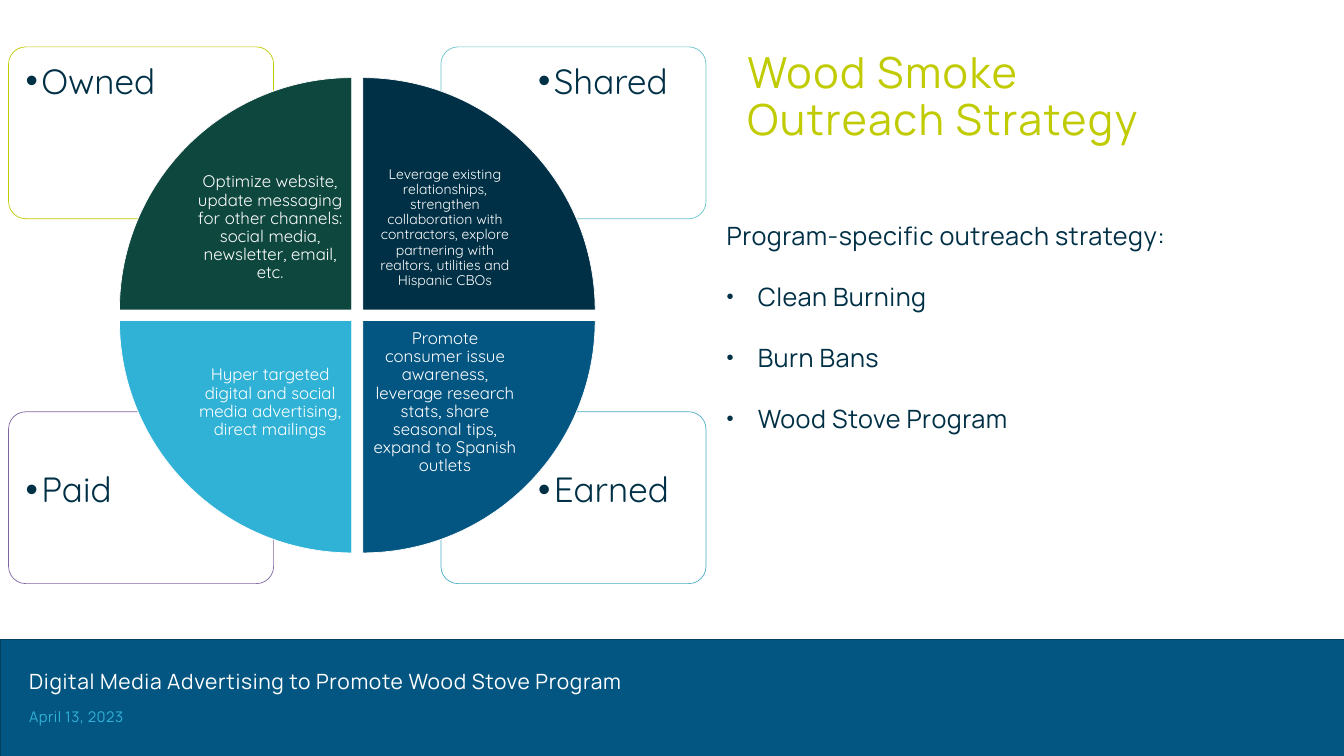
"""Build the wood smoke outreach strategy slide."""
from lxml import etree
from pptx import Presentation
from pptx.dml.color import RGBColor
from pptx.enum.shapes import MSO_SHAPE
from pptx.enum.text import MSO_ANCHOR, PP_ALIGN
from pptx.oxml.ns import qn
from pptx.util import Inches, Pt

RECT = MSO_SHAPE.RECTANGLE
ROUND = MSO_SHAPE.ROUNDED_RECTANGLE
WEDGE = MSO_SHAPE.PIE_WEDGE
TOP, MIDDLE = MSO_ANCHOR.TOP, MSO_ANCHOR.MIDDLE
LEFT, CENTER = PP_ALIGN.LEFT, PP_ALIGN.CENTER

COLORS = {
    "white": "FFFFFF", "navy": "003046", "edge": "034060", "blue": "045682",
    "sky": "30B2D7", "green": "0E473E", "lime": "C0CB01", "aqua": "69C3C9",
    "teal": "4BACC6", "purple": "8064A2",
}

prs = Presentation()
prs.slide_width, prs.slide_height = Inches(26.67), Inches(15)
slide = prs.slides.add_slide(prs.slide_layouts[6])


def add_box(kind, left, top, width, height, fill, line):
    box = slide.shapes.add_shape(
        kind, Inches(left), Inches(top), Inches(width), Inches(height))
    box.shadow.inherit = False
    box.fill.solid()
    box.fill.fore_color.rgb = RGBColor.from_string(COLORS[fill])
    box.line.color.rgb = RGBColor.from_string(COLORS[line])
    box.line.width = Pt(1)
    return box


def add_text(left, top, width, height, lines, size, color, face="Manrope",
             pad=(0, 0), track=0, space=0.9, after=0, anchor=TOP, align=LEFT,
             wrap=True, indent=0, bullet=100, plain=0):
    box = slide.shapes.add_textbox(
        Inches(left), Inches(top), Inches(width), Inches(height))
    frame = box.text_frame
    frame.word_wrap = wrap
    frame.vertical_anchor = anchor
    frame.margin_left = frame.margin_right = Inches(pad[0])
    frame.margin_top = frame.margin_bottom = Inches(pad[1])
    for i, line in enumerate(lines):
        para = frame.paragraphs[0] if i == 0 else frame.add_paragraph()
        para.text = line
        para.alignment = align
        para.line_spacing = space
        para.space_after = Pt(after)
        if indent and i >= plain:
            props = para._p.get_or_add_pPr()
            props.set("marL", str(Inches(indent)))
            props.set("indent", str(-Inches(indent)))
            etree.SubElement(props, qn("a:buSzPct"), val=str(bullet * 1000))
            etree.SubElement(props, qn("a:buFont"), typeface="Arial")
            etree.SubElement(props, qn("a:buChar"), char="•")
        font = para.font
        font.name, font.size = face, Pt(size)
        font.color.rgb = RGBColor.from_string(COLORS[color])
        if track:
            font._element.set("spc", str(int(track * 100)))


add_box(RECT, 0, 12.69, 26.67, 2.31, "blue", "edge")
add_text(0.58, 14.08, 2.04, 0.33, ["April 13, 2023"], 21, "sky",
         track=0.7, wrap=False)
add_text(0.58, 13.33, 14.68, 0.5,
         ["Digital Media Advertising to Promote Wood Stove Program"],
         30, "white", track=1)
add_text(14.83, 1.03, 9.95, 1.06, ["Wood Smoke\vOutreach Strategy"],
         61.2, "lime", track=2.2, wrap=False)
add_text(14.32, 4.22, 10.46, 7.1,
         ["Program-specific outreach strategy:", "Clean Burning", "Burn Bans",
          "Wood Stove Program"],
         36, "navy", pad=(0.1, 0.05), track=0.7, space=Pt(51), after=36,
         indent=0.62, bullet=80, plain=1)

cards = [
    ("Earned", 1, 1, "teal"),
    ("Paid", 0, 1, "purple"),
    ("Shared", 1, 0, "aqua"),
    ("Owned", 0, 0, "lime"),
]
for name, col, row, line in cards:
    left, top = 0.17 + 8.58 * col, 0.93 + 7.24 * row
    card = add_box(ROUND, left, top, 5.26, 3.41, "white", line)
    card.adjustments[0] = 0.1
    add_text(0.24 + 10.17 * col, 1 + 8.1 * row, 3.53, 2.41, [name], 50, "navy",
             "Quicksand", pad=(0.27, 0.27), indent=0.31)

wedges = [
    (0, 0, "green", 24, "Optimize website, update messaging for other channels: "
     "social media, newsletter, email, etc."),
    (1, 0, "navy", 20, "Leverage existing relationships, strengthen collaboration "
     "with contractors, explore partnering with realtors, utilities and "
     "Hispanic CBOs"),
    (1, 1, "blue", 24, "Promote consumer issue awareness, leverage research stats, "
     "share seasonal tips, expand to Spanish outlets"),
    (0, 1, "sky", 24, "Hyper targeted digital and social media advertising, "
     "direct mailings"),
]
for turn, (col, row, fill, size, text) in enumerate(wedges):
    wedge = add_box(WEDGE, 2.37 + 4.83 * col, 1.54 + 4.82 * row, 4.61, 4.61,
                    fill, "white")
    wedge.rotation = 90 * turn
    pad = 0.19 if size == 24 else 0.16
    add_text(3.73 + 3.47 * col, 2.89 + 3.47 * row, 3.26, 3.26, [text], size,
             "white", "Quicksand", pad=(pad, pad), anchor=MIDDLE, align=CENTER)

prs.save("out.pptx")
